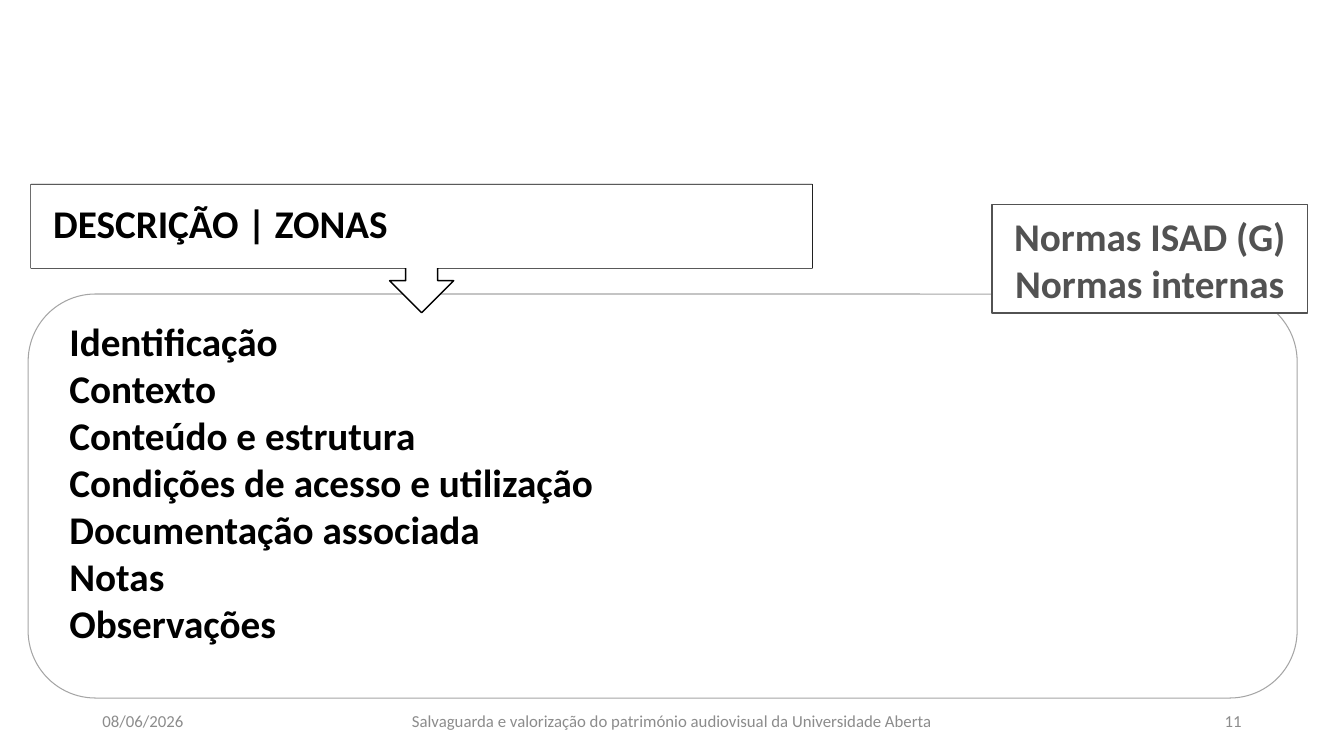
from pptx import Presentation
from pptx.dml.color import RGBColor
from pptx.enum.shapes import MSO_SHAPE as Preset
from pptx.enum.text import MSO_ANCHOR as Anchor, PP_ALIGN as Align
from pptx.util import Cm, Pt

FONT = "Calibri"
COLORS = {
    "white": "FFFFFF",
    "black": "000000",
    "dark": "525252",
    "border": "A5A5A5",
    "footer": "8C8C8C",
}
ZONES = [
    "Identificação",
    "Contexto",
    "Conteúdo e estrutura",
    "Condições de acesso e utilização",
    "Documentação associada",
    "Notas",
    "Observações",
]
STANDARDS = ["Normas ISAD (G)", "Normas internas"]
FOOTERS = [
    ("08/06/2026", 2.33, 7.62, Align.LEFT),
    ("Salvaguarda e valorização do património audiovisual da Universidade Aberta",
     7.94, 17.99, Align.CENTER),
    ("11", 23.92, 7.62, Align.RIGHT),
]


def color(name):
    return RGBColor.from_string(COLORS[name])


def write(shape, lines, size=28, color_name="black", bold=True,
          align=Align.LEFT, anchor=Anchor.MIDDLE):
    text_frame = shape.text_frame
    text_frame.word_wrap = True
    text_frame.vertical_anchor = anchor
    text_frame.text = "\n".join(lines)
    for paragraph in text_frame.paragraphs:
        paragraph.alignment = align
        for run in paragraph.runs:
            run.font.name = FONT
            run.font.size = Pt(size)
            run.font.bold = bold
            run.font.color.rgb = color(color_name)


def add_text(slide, lines, left, top, width, height, **style):
    box = slide.shapes.add_textbox(Cm(left), Cm(top), Cm(width), Cm(height))
    write(box, lines, **style)


def add_outlined(slide, preset, left, top, width, height, line, weight, fill=None):
    shape = slide.shapes.add_shape(preset, Cm(left), Cm(top), Cm(width), Cm(height))
    shape.shadow.inherit = False
    shape.line.color.rgb = color(line)
    shape.line.width = Pt(weight)
    if fill:
        shape.fill.solid()
        shape.fill.fore_color.rgb = color(fill)
    else:
        shape.fill.background()
    return shape


def place_title(slide, text, left, top, width, height):
    """Lay the title over the box part of the callout, in front of it."""
    title = slide.shapes.title
    title.left, title.top = Cm(left), Cm(top)
    title.width, title.height = Cm(width), Cm(height)
    title.fill.solid()
    title.fill.fore_color.rgb = color("white")
    write(title, [text])
    text_frame = title.text_frame
    text_frame.margin_left = text_frame.margin_right = Cm(0.56)
    text_frame.margin_top = text_frame.margin_bottom = Cm(0.56)
    text_frame.paragraphs[0].line_spacing = 0.9
    slide.shapes._spTree.append(title._element)


def main():
    presentation = Presentation()
    presentation.slide_width, presentation.slide_height = Cm(33.87), Cm(19.05)
    slide = presentation.slides.add_slide(presentation.slide_layouts[5])

    for text, left, width, align in FOOTERS:
        add_text(slide, [text], left, 17.65, width, 1.01, size=12,
                 color_name="footer", bold=False, align=align)

    add_text(slide, ZONES, 1.5, 7.87, 16.97, 8.64, anchor=Anchor.TOP)
    add_outlined(slide, Preset.ROUNDED_RECTANGLE, 0.71, 7.41, 31.98, 10.18,
                 "border", 0.75)

    standards = add_outlined(slide, Preset.RECTANGLE, 25, 5.16, 7.95, 2.73,
                             "dark", 1, "white")
    write(standards, STANDARDS, color_name="dark", align=Align.CENTER)

    callout = add_outlined(slide, Preset.UP_ARROW_CALLOUT, 0.78, 4.65, 19.69, 3.23,
                           "black", 1, "white")
    callout.rotation = 180
    place_title(slide, "DESCRIÇÃO | ZONAS", 0.78, 4.65, 19.69, 2.1)

    presentation.save("out.pptx")


if __name__ == "__main__":
    main()
